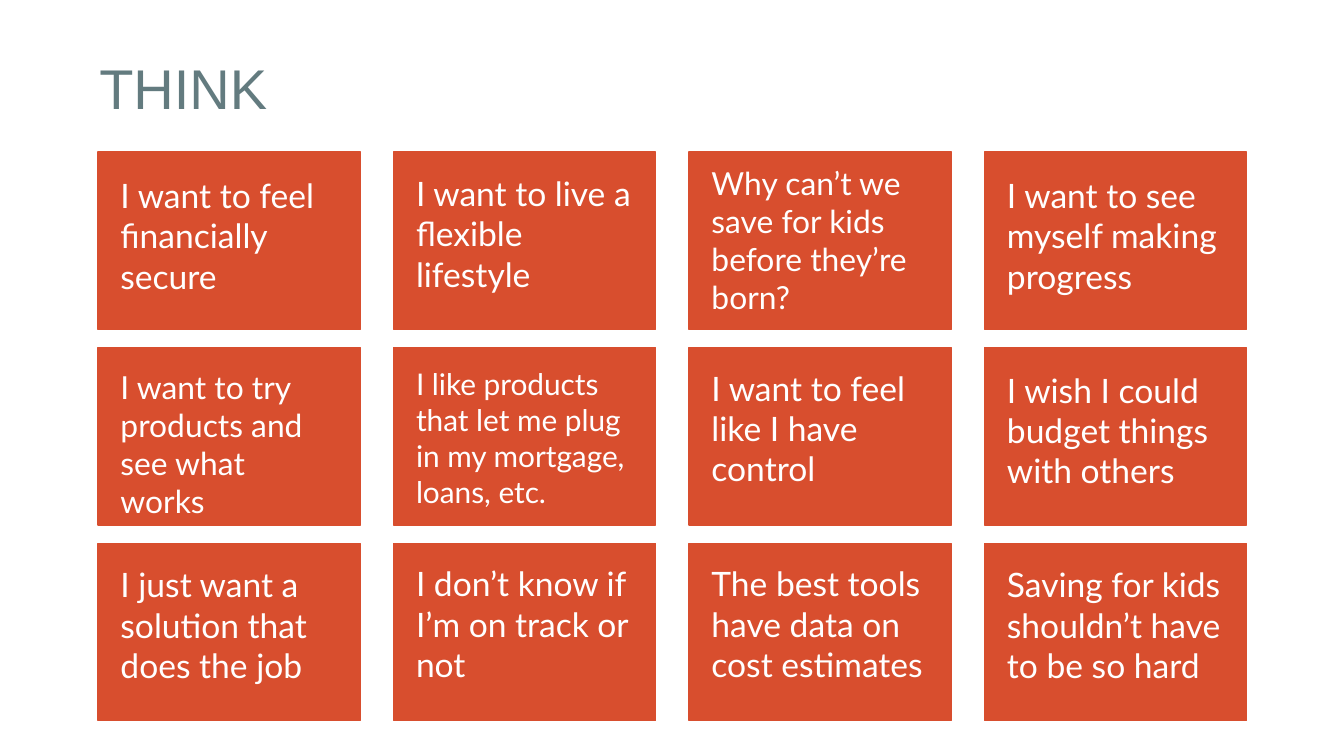
from pptx import Presentation
from pptx.dml.color import RGBColor
from pptx.enum.shapes import MSO_SHAPE
from pptx.enum.text import MSO_ANCHOR, MSO_AUTO_SIZE, PP_ALIGN
from pptx.util import Pt

ORANGE = RGBColor(0xD8, 0x4E, 0x2E)
SLATE = RGBColor(0x63, 0x7B, 0x7F)
WHITE = RGBColor(0xFF, 0xFF, 0xFF)

TITLE = "THINK"
# Rows of cards: statement, font size, text offset below the card's top
CARDS = [
    [
        ("I want to feel financially secure", 18, 5),
        ("I want to live a flexible lifestyle", 18, 4),
        ("Why can’t we save for kids before they’re born?", 17, -1),
        ("I want to see myself making progress", 18, 5),
    ],
    [
        ("I want to try products and see what works", 17, 3.5),
        ("I like products that let me plug in my mortgage, loans, etc.", 16, 2.5),
        ("I want to feel like I have control", 18, 3.5),
        ("I wish I could budget things with others", 18, 4.5),
    ],
    [
        ("I just want a solution that does the job", 18, 4),
        ("I don’t know if I’m on track or not", 18, 3.5),
        ("The best tools have data on cost estimates", 18, 3.5),
        ("Saving for kids shouldn’t have to be so hard", 18, 4),
    ],
]

GRID_LEFT, GRID_TOP = 52.5, 81.5
COLUMN_STEP, ROW_STEP = 158.3, 104.8
CARD_WIDTH, CARD_HEIGHT = 140.5, 95
TEXT_INDENT, TEXT_WIDTH, TEXT_HEIGHT = 5, 129.6, 87

FRAME_FORMAT = {
    "word_wrap": True,
    "auto_size": MSO_AUTO_SIZE.NONE,
    "vertical_anchor": MSO_ANCHOR.TOP,
    "margin_left": Pt(7.2),
    "margin_top": Pt(7.2),
    "margin_right": Pt(7.2),
    "margin_bottom": Pt(7.2),
}


def apply_format(target, values):
    for name, value in values.items():
        setattr(target, name, value)


def write_text(shape, text, font_name, size, color, paragraph_format):
    frame = shape.text_frame
    frame.text = text
    apply_format(frame, FRAME_FORMAT)
    paragraph = frame.paragraphs[0]
    apply_format(paragraph, {"alignment": PP_ALIGN.LEFT, **paragraph_format})
    font = paragraph.runs[0].font
    apply_format(font, {"name": font_name, "size": Pt(size)})
    font.color.rgb = color


def add_title(slide):
    title = slide.shapes.title
    apply_format(title, {"left": Pt(46), "top": Pt(18),
                         "width": Pt(235.5), "height": Pt(45.5)})
    write_text(title, TITLE, "Arial", 30, SLATE, {"line_spacing": 1.1})


def add_card(slide, left, top, text, size, text_offset):
    card = slide.shapes.add_shape(MSO_SHAPE.RECTANGLE, Pt(left), Pt(top),
                                  Pt(CARD_WIDTH), Pt(CARD_HEIGHT))
    card.shadow.inherit = False
    card.fill.solid()
    card.fill.fore_color.rgb = ORANGE
    card.line.color.rgb = ORANGE
    card.line.width = Pt(0.75)

    statement = slide.shapes.add_textbox(
        Pt(left + TEXT_INDENT), Pt(top + text_offset),
        Pt(TEXT_WIDTH), Pt(TEXT_HEIGHT))
    write_text(statement, text, "Lato", size, WHITE, {"space_after": Pt(16)})


def main():
    presentation = Presentation()
    presentation.slide_width, presentation.slide_height = Pt(720), Pt(405)
    title_only = presentation.slide_layouts[5]
    slide = presentation.slides.add_slide(title_only)
    add_title(slide)
    for row, cards in enumerate(CARDS):
        for column, (text, size, text_offset) in enumerate(cards):
            add_card(slide, GRID_LEFT + column * COLUMN_STEP,
                     GRID_TOP + row * ROW_STEP, text, size, text_offset)
    presentation.save("out.pptx")


if __name__ == "__main__":
    main()
